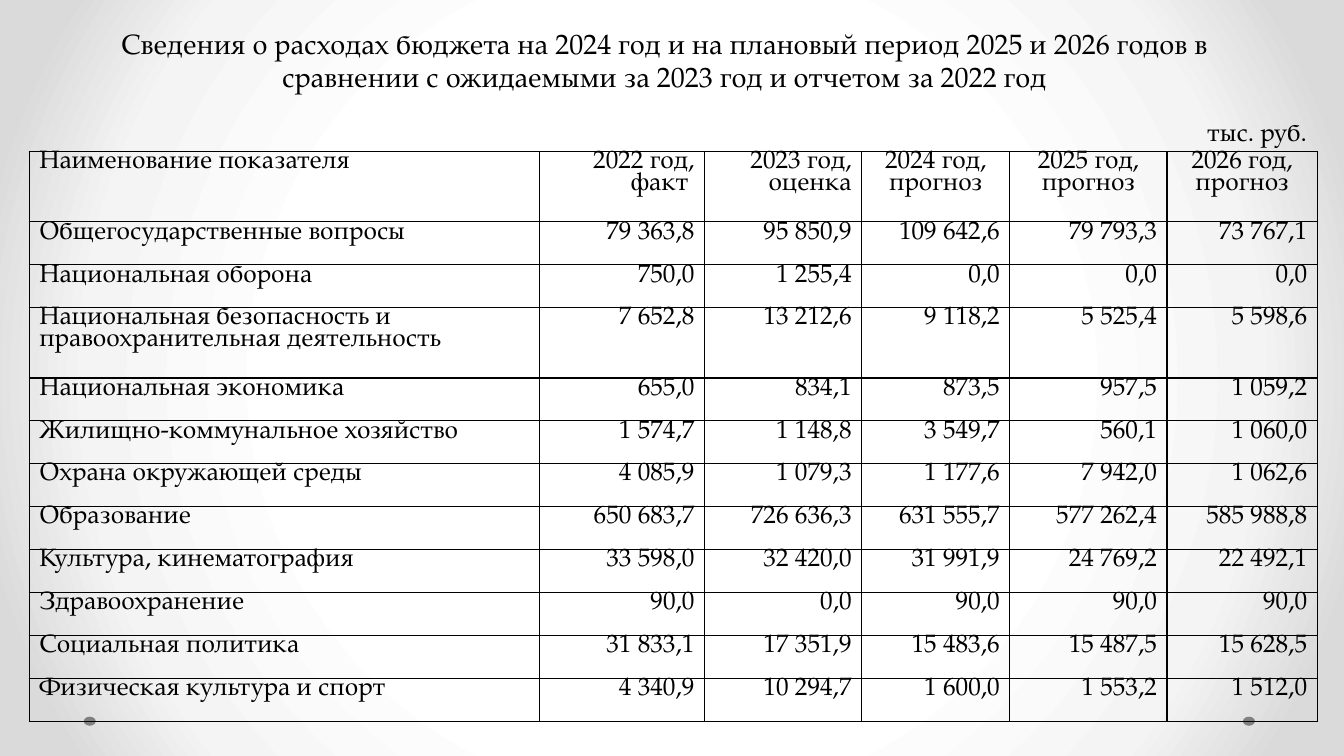
import pptx
import pptx.util
import pptx.oxml
import pptx.dml.color
import pptx.enum.shapes
import pptx.enum.text

Pt = pptx.util.Pt
ALIGN = pptx.enum.text.PP_ALIGN
ANCHOR = pptx.enum.text.MSO_ANCHOR

FONT = "TeX Gyre Pagella"
COLORS = {
    "text": "000000",
    "border": "000000",
    "dot": "808080",
    "center": "FFFFFF",
    "middle": "F4F4F4",
    "edge": "DADADA",
}
NAMESPACE = 'xmlns:a="http://schemas.openxmlformats.org/drawingml/2006/main"'

TITLE = (
    "Сведения о расходах бюджета на 2024 год и на плановый период 2025 и 2026 годов "
    "в сравнении с ожидаемыми за 2023 год и отчетом за 2022 год"
)
HEADER = ["Наименование показателя", "2022 год, факт ", "2023 год, оценка",
          "2024 год, прогноз", "2025 год, прогноз", "2026 год, прогноз"]
EXPENSES = [
    ["Общегосударственные вопросы", "79 363,8", "95 850,9", "109 642,6", "79 793,3", "73 767,1"],
    ["Национальная оборона", "750,0", "1 255,4", "0,0", "0,0", "0,0"],
    ["Национальная безопасность и правоохранительная деятельность",
     "7 652,8", "13 212,6", "9 118,2", "5 525,4", "5 598,6"],
    ["Национальная экономика", "655,0", "834,1", "873,5", "957,5", "1 059,2"],
    ["Жилищно-коммунальное хозяйство", "1 574,7", "1 148,8", "3 549,7", "560,1", "1 060,0"],
    ["Охрана окружающей среды", "4 085,9", "1 079,3", "1 177,6", "7 942,0", "1 062,6"],
    ["Образование", "650 683,7", "726 636,3", "631 555,7", "577 262,4", "585 988,8"],
    ["Культура, кинематография", "33 598,0", "32 420,0", "31 991,9", "24 769,2", "22 492,1"],
    ["Здравоохранение", "90,0", "0,0", "90,0", "90,0", "90,0"],
    ["Социальная политика", "31 833,1", "17 351,9", "15 483,6", "15 487,5", "15 628,5"],
    ["Физическая культура и спорт", "4 340,9", "10 294,7", "1 600,0", "1 553,2", "1 512,0"],
]
COLUMN_WIDTHS = [364.3, 118.1, 112.3, 105.8, 112.3, 107.3]
ROW_HEIGHT = 30.65
TALL_ROW_HEIGHT = 50.2
TALL_ROWS = {0, 3}


def rgb(name):
    return pptx.dml.color.RGBColor.from_string(COLORS[name])


def style_paragraph(para, size, align):
    para.alignment = align
    para.font.name = FONT
    para.font.size = Pt(size)
    para.font.color.rgb = rgb("text")


def set_background(page):
    """Radial gradient, light in the centre."""
    fill = page.background.fill
    fill.solid()
    properties = page.background._cSld.bg.bgPr
    stops = "".join(
        f'<a:gs pos="{percent * 1000}"><a:srgbClr val="{COLORS[name]}"/></a:gs>'
        for percent, name in [(50, "center"), (76, "middle"), (92, "edge")]
    )
    gradient = pptx.oxml.parse_xml(
        f'<a:gradFill {NAMESPACE} rotWithShape="1"><a:gsLst>{stops}</a:gsLst>'
        '<a:path path="circle"><a:fillToRect l="50000" t="50000" r="50000" b="50000"/>'
        "</a:path></a:gradFill>"
    )
    properties.replace(properties[0], gradient)


def add_dot(page, left):
    dot = page.shapes.add_shape(pptx.enum.shapes.MSO_SHAPE.OVAL,
                                Pt(left), Pt(511.9), Pt(8.6), Pt(6.5))
    dot.shadow.inherit = False
    dot.fill.solid()
    dot.fill.fore_color.rgb = rgb("dot")
    dot.line.fill.background()


def set_title(page):
    title = page.shapes.title
    title.left, title.top, title.width, title.height = Pt(63.4), Pt(15.1), Pt(822.2), Pt(55.7)
    frame = title.text_frame
    frame.text = TITLE
    frame.word_wrap = True
    frame.auto_size = pptx.enum.text.MSO_AUTO_SIZE.NONE
    frame.vertical_anchor = ANCHOR.TOP
    style_paragraph(frame.paragraphs[0], 20, ALIGN.CENTER)


def add_unit_label(page):
    box = page.shapes.add_textbox(Pt(855.4), Pt(79.2), Pt(90), Pt(28.8))
    box.text_frame.word_wrap = False
    para = box.text_frame.paragraphs[0]
    para.text = "тыс. руб."
    style_paragraph(para, 18, ALIGN.LEFT)


def add_borders(cell):
    properties = cell._tc.get_or_add_tcPr()
    for index, side in enumerate(["lnL", "lnR", "lnT", "lnB"]):
        properties.insert(index, pptx.oxml.parse_xml(
            f'<a:{side} {NAMESPACE} w="{Pt(1)}"><a:solidFill>'
            f'<a:srgbClr val="{COLORS["border"]}"/></a:solidFill></a:{side}>'
        ))


def fill_cell(cell, text, align):
    cell.fill.background()
    cell.margin_top = cell.margin_bottom = 0
    cell.vertical_anchor = ANCHOR.TOP
    para = cell.text_frame.paragraphs[0]
    para.text = text
    para.line_spacing = 0.85
    style_paragraph(para, 18, align)
    add_borders(cell)


def cell_align(row, column):
    if column == 0:
        return ALIGN.LEFT
    return ALIGN.CENTER if row == 0 and column >= 3 else ALIGN.RIGHT


def add_expense_table(page):
    rows = [HEADER] + EXPENSES
    heights = [TALL_ROW_HEIGHT if row in TALL_ROWS else ROW_HEIGHT for row in range(len(rows))]
    table = page.shapes.add_table(len(rows), len(HEADER), Pt(20.9), Pt(108.3),
                                  Pt(sum(COLUMN_WIDTHS)), Pt(sum(heights))).table
    table.first_row = table.horz_banding = False
    for column, width in zip(table.columns, COLUMN_WIDTHS):
        column.width = Pt(width)
    for row, texts in enumerate(rows):
        table.rows[row].height = Pt(heights[row])
        for column, text in enumerate(texts):
            fill_cell(table.cell(row, column), text, cell_align(row, column))


def main():
    deck = pptx.Presentation()
    deck.slide_width, deck.slide_height = Pt(960), Pt(540)
    page = deck.slides.add_slide(deck.slide_layouts[5])

    # Backdrop
    set_background(page)
    for left in (59.8, 887.8):
        add_dot(page, left)

    # Heading, table and its unit
    set_title(page)
    add_expense_table(page)
    add_unit_label(page)

    deck.save("out.pptx")


if __name__ == "__main__":
    main()
